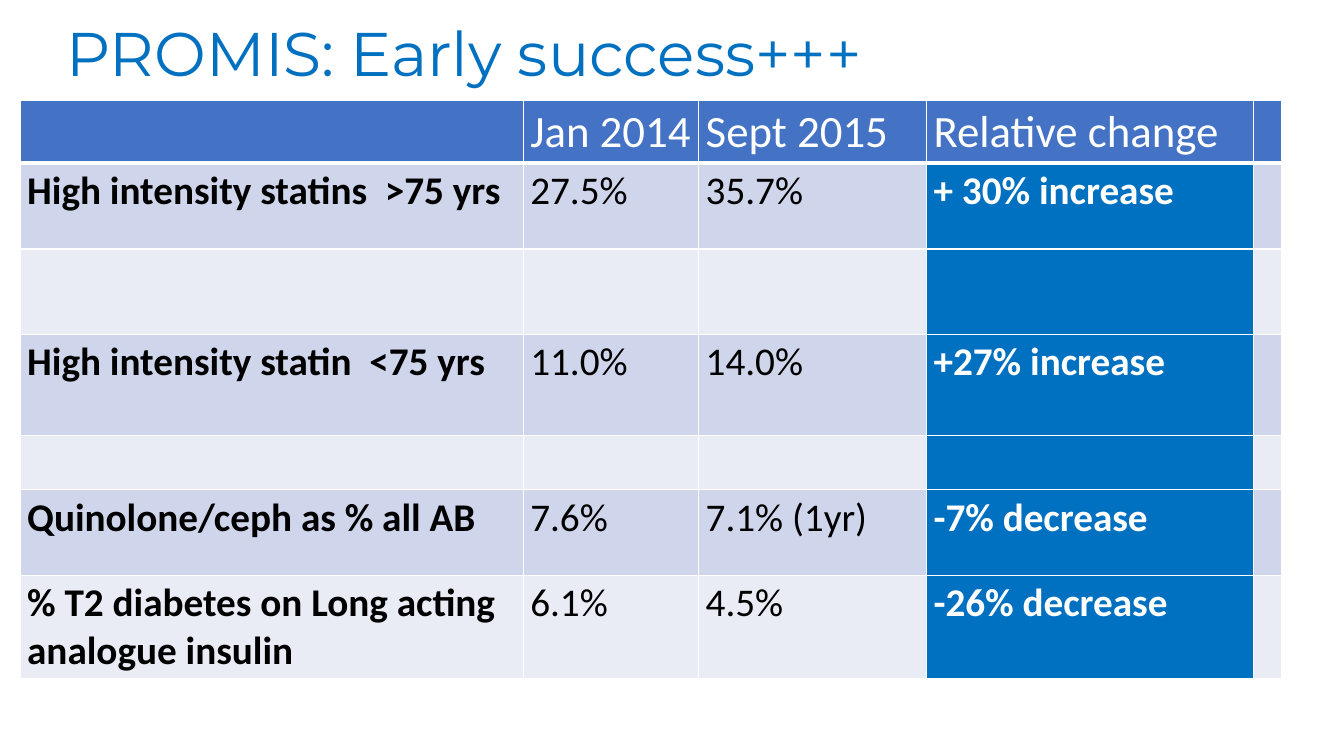
"""Build the PROMIS early success slide with its prescribing results table."""
from lxml import etree
from pptx import Presentation
from pptx.dml.color import RGBColor
from pptx.enum.text import MSO_ANCHOR
from pptx.oxml.ns import qn
from pptx.util import Inches, Pt

MIDDLE = MSO_ANCHOR.MIDDLE
WHITE = RGBColor(0xFF, 0xFF, 0xFF)
BLACK = RGBColor(0x00, 0x00, 0x00)
BRIGHT_BLUE = RGBColor(0x00, 0x70, 0xC0)
HEADER_BLUE = RGBColor(0x44, 0x72, 0xC4)
BAND_DARK = RGBColor(0xCF, 0xD5, 0xEA)
BAND_LIGHT = RGBColor(0xE9, 0xEB, 0xF5)

COLUMN_WIDTHS = [4.99, 1.74, 2.26, 3.24, 0.28]
ROW_HEIGHTS = [0.62, 0.85, 0.85, 1, 0.54, 0.85, 1.02]
CHANGE_COLUMN = 3
RESULTS = [
    ["", "Jan 2014", "Sept 2015", "Relative change", ""],
    ["High intensity statins  >75 yrs", "27.5%", "35.7%", "+ 30% increase", ""],
    [""] * 5,
    ["High intensity statin  <75 yrs", "11.0%", "14.0%", "+27% increase", ""],
    [""] * 5,
    ["Quinolone/ceph as % all AB", "7.6%", "7.1% (1yr)", "-7% decrease", ""],
    ["% T2 diabetes on Long acting analogue insulin", "6.1%", "4.5%", "-26% decrease", ""],
]


def style_text(paragraph, font_name, size, color, bold=False):
    font = paragraph.font
    font.name, font.size, font.bold = font_name, Pt(size), bold
    font.color.rgb = color


def add_borders(cell, bottom_width):
    properties = cell._tc.get_or_add_tcPr()
    widths = {"a:lnL": 1, "a:lnR": 1, "a:lnT": 1, "a:lnB": bottom_width}
    for position, (side, width) in enumerate(widths.items()):
        border = etree.Element(qn(side), w=str(Pt(width)))
        solid = etree.SubElement(border, qn("a:solidFill"))
        etree.SubElement(solid, qn("a:srgbClr"), val=str(WHITE))
        properties.insert(position, border)


prs = Presentation()
prs.slide_width, prs.slide_height = Inches(13.33), Inches(7.5)
slide = prs.slides.add_slide(prs.slide_layouts[6])

title = slide.shapes.add_textbox(
    Inches(0.56), Inches(0), Inches(11.5), Inches(1.13)).text_frame
title.word_wrap = True
title.vertical_anchor = MIDDLE
title.text = "PROMIS: Early success+++"
title.paragraphs[0].line_spacing = 0.9
style_text(title.paragraphs[0], "Montserrat", 44, BRIGHT_BLUE)

results_table = slide.shapes.add_table(
    len(ROW_HEIGHTS), len(COLUMN_WIDTHS), Inches(0.2), Inches(1),
    Inches(sum(COLUMN_WIDTHS)), Inches(sum(ROW_HEIGHTS))).table
for column, width in zip(results_table.columns, COLUMN_WIDTHS):
    column.width = Inches(width)
for row, height in zip(results_table.rows, ROW_HEIGHTS):
    row.height = Inches(height)

for row_index, row_texts in enumerate(RESULTS):
    is_header = row_index == 0
    band = BAND_DARK if row_index % 2 else BAND_LIGHT
    for column_index, words in enumerate(row_texts):
        is_change = column_index == CHANGE_COLUMN
        cell = results_table.cell(row_index, column_index)
        cell.margin_left = cell.margin_right = Inches(0.07)
        cell.margin_top = cell.margin_bottom = Inches(0.04)
        cell.fill.solid()
        cell.fill.fore_color.rgb = (
            HEADER_BLUE if is_header else BRIGHT_BLUE if is_change else band)
        add_borders(cell, 3 if is_header else 1)
        if words:
            cell.text_frame.text = words
            style_text(
                cell.text_frame.paragraphs[0], "Calibri", 32 if is_header else 28,
                WHITE if is_header or is_change else BLACK,
                not is_header and column_index in (0, CHANGE_COLUMN))

prs.save("out.pptx")
